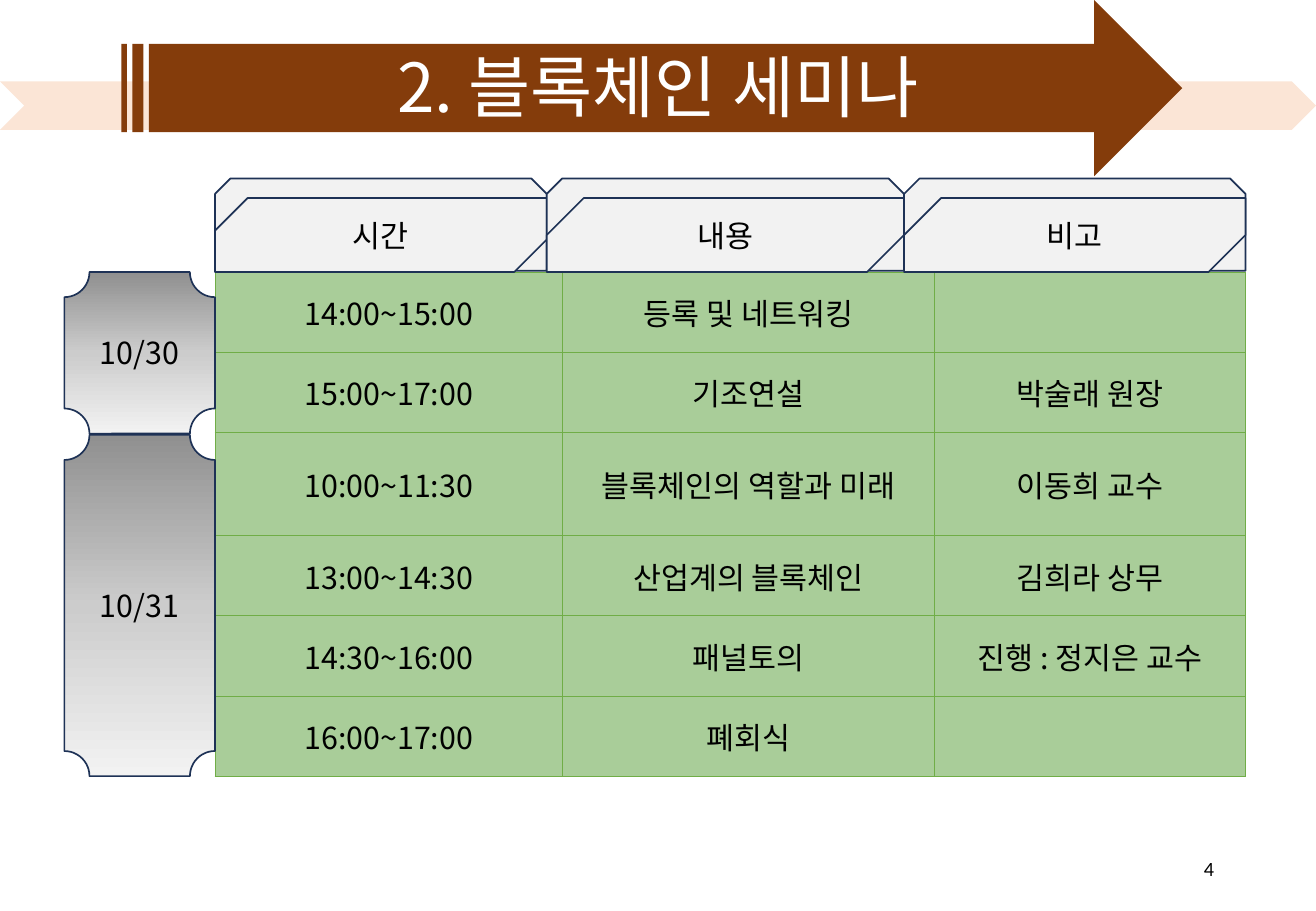
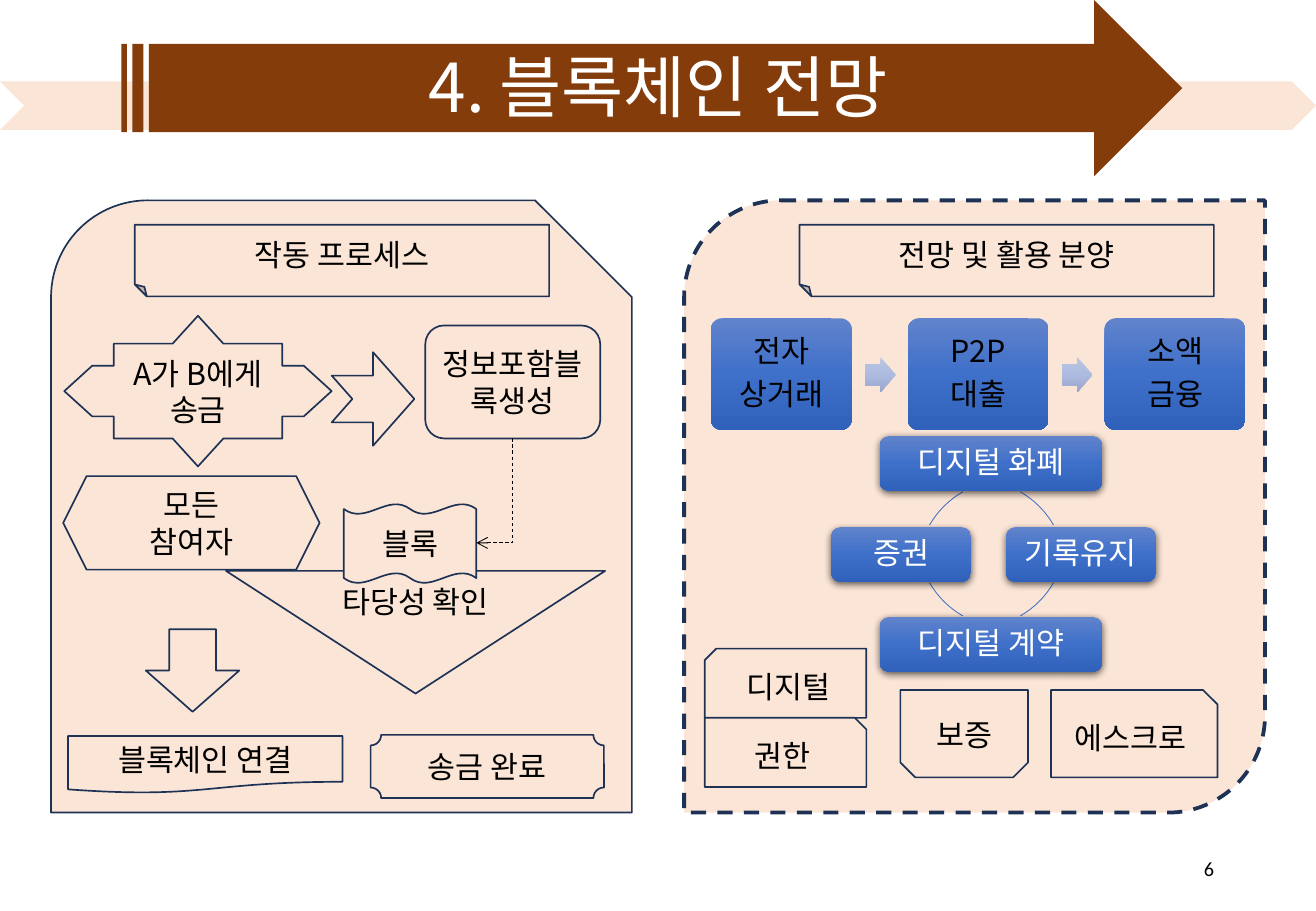
from lxml import etree
from pptx import Presentation
from pptx import util as u
from pptx.dml.color import RGBColor
from pptx.enum import dml, shapes, text
from pptx.oxml.ns import qn

PX = 9144  # 100 px to the inch
W, H = 1083, 750
FONT = "Noto Sans CJK KR"
BLACK, WHITE = "000000", "FFFFFF"
BROWN, PEACH, NAVY, PALE = "843C0B", "FBE5D6", "1E3256", "F2F2F2"
GREEN, GREEN_EDGE, BLUE = "A9CD99", "70AD47", "4472C4"
GREY_GRAD = ("909090", "CCCCCC", "F2F2F2")
BLUE_GRAD = ("6183CB", "3E70CA", "3062BB")
HAZE_GRAD = ("BBC5E3", "AEBBE0", "98A4CB")
S = shapes.MSO_SHAPE
CENTER, RIGHT = text.PP_ALIGN.CENTER, text.PP_ALIGN.RIGHT
DASH = dml.MSO_LINE.DASH


def emu(*lengths):
    return [u.Emu(n * PX) for n in lengths]


def rgb(value):
    return RGBColor.from_string(value)


def sub(parent, tag, **attrs):
    return etree.SubElement(parent, qn(tag), {k: str(v) for k, v in attrs.items()})


def write(tf, words, size=18, color=BLACK, font=FONT, align=CENTER, spacing=None, after=None):
    tf.vertical_anchor = text.MSO_ANCHOR.MIDDLE
    for i, line in enumerate(words.split("\n")):
        p = tf.add_paragraph() if i else tf.paragraphs[0]
        p.alignment = align
        if spacing:
            p.line_spacing = spacing
        if after:
            p.space_after = u.Pt(after)
        r = p.add_run()
        r.text = line
        r.font.size, r.font.name = u.Pt(size), font
        r.font.color.rgb = rgb(color)
        sub(r._r.get_or_add_rPr(), "a:ea", typeface=font)


def label(parent, box, words, **style):
    tf = parent.add_textbox(*emu(*box)).text_frame
    tf.word_wrap = True
    write(tf, words, **style)


def gradient(sp, colors):
    """Vertical gradient with evenly spaced stops."""
    sp.fill.gradient()
    sp.fill.gradient_angle = 270
    stops = sp.element.spPr.find(".//" + qn("a:gsLst"))
    stops.clear()
    for i, color in enumerate(colors):
        gs = sub(stops, "a:gs", pos=100000 * i // (len(colors) - 1))
        sub(gs, "a:srgbClr", val=color)


def shape(parent, kind, box, words="", fill=PEACH, line=NAVY, width=1, adj=(), flip=False):
    sp = parent.add_shape(kind, *emu(*box))
    sp.shadow.inherit = False
    for i, value in enumerate(adj):
        sp.adjustments[i] = value
    if fill is None:
        sp.fill.background()
    elif isinstance(fill, tuple):
        gradient(sp, fill)
    else:
        sp.fill.solid()
        sp.fill.fore_color.rgb = rgb(fill)
    if line:
        sp.line.color.rgb, sp.line.width = rgb(line), u.Pt(width)
    else:
        sp.line.fill.background()
    if flip:
        sp.element.spPr.xfrm.set("flipH", "1")
    if words:
        write(sp.text_frame, words)
    return sp


def node(parent, box, words, color=WHITE, adj=(), shadow=True):
    """Blue gradient box with a tight text margin."""
    sp = shape(parent, S.ROUNDED_RECTANGLE, box, fill=BLUE_GRAD, line=None, adj=adj)
    tf = sp.text_frame
    tf.margin_left = tf.margin_right = tf.margin_top = tf.margin_bottom = emu(7)[0]
    write(tf, words, color=color, spacing=0.9, after=6.3)
    if shadow:
        effects = sp.element.spPr.find(qn("a:effectLst"))
        outer = sub(effects, "a:outerShdw", blurRad=57150, dist=19050, dir=5400000,
                    algn="ctr", rotWithShape=0)
        sub(sub(outer, "a:srgbClr", val=BLACK), "a:alpha", val=63000)


def elbow_down_left(parent, start, end, box):
    """Dashed arrow from the bottom of one shape to the right side of a flipped one."""
    x, y, w, h = box
    c = parent.add_connector(shapes.MSO_CONNECTOR.ELBOW, *emu(x, y, x + w, y + h))
    c.begin_connect(start, 2)
    c.end_connect(end, 1)
    c.left, c.top, c.width, c.height = emu(*box)
    c.line.color.rgb, c.line.width = rgb(BLACK), u.Pt(0.5)
    c.line.dash_style = DASH
    spPr = c.element.spPr
    spPr.xfrm.set("flipH", "0")
    spPr.xfrm.set("rot", "5400000")
    spPr.find(qn("a:prstGeom")).set("prst", "bentConnector2")
    sub(spPr.find(qn("a:ln")), "a:tailEnd", type="arrow")
    sub(spPr, "a:effectLst")


def table(parent, x, y, cols, heights, rows):
    frame = parent.add_table(len(rows), len(cols), *emu(x, y, sum(cols), sum(heights)))
    t = frame.table
    t.first_row = t.horz_banding = False
    for column, width in zip(t.columns, emu(*cols)):
        column.width = width
    for row, height, words in zip(t.rows, emu(*heights), rows):
        row.height = height
        for cell, word in zip(row.cells, words):
            tcPr = cell._tc.get_or_add_tcPr()
            for side in "LRTB":
                ln = sub(tcPr, "a:ln" + side, w=6350)
                sub(sub(ln, "a:solidFill"), "a:srgbClr", val=GREEN_EDGE)
            cell.fill.solid()
            cell.fill.fore_color.rgb = rgb(GREEN)
            cell.vertical_anchor = text.MSO_ANCHOR.MIDDLE
            if word:
                write(cell.text_frame, word)


def new_slide(prs, title, number):
    """Blank slide with the shared band, arrow, title and page number."""
    s = prs.slides.add_slide(prs.slide_layouts[6])
    shape(s.shapes, S.CHEVRON, (0, 67, W, 40), line=None)
    shape(s.shapes, S.STRIPED_RIGHT_ARROW, (100, 0, 873, 145), fill=BROWN, line=None)
    label(s.shapes, (0, 2, W, 145), title, size=40, color=WHITE, spacing=0.9)
    label(s.shapes, (765, 695, 244, 40), number, size=12, font="Calibri", align=RIGHT)
    return s


def seminar(prs):
    sh = new_slide(prs, "2. 블록체인 세미나", "4").shapes
    table(sh, 177, 224, (286, 306, 256), (66, 66, 85, 66, 66, 66), [
        ("14:00~15:00", "등록 및 네트워킹", ""),
        ("15:00~17:00", "기조연설", "박술래 원장"),
        ("10:00~11:30", "블록체인의 역할과 미래", "이동희 교수"),
        ("13:00~14:30", "산업계의 블록체인", "김희라 상무"),
        ("14:30~16:00", "패널토의", "진행 : 정지은 교수"),
        ("16:00~17:00", "폐회식", ""),
    ])
    # Column tabs
    x = 177
    for word, width, cut in (("시간", 273, 0.44), ("내용", 294, 0.5), ("비고", 281, 0.5)):
        shape(sh, S.SNIP_2_SAME_RECTANGLE, (x, 147, width, 76), fill=PALE)
        shape(sh, S.SNIP_2_DIAG_RECTANGLE, (x, 163, width, 61), word, fill=PALE, adj=(cut, 0))
        x += width
    # Dates
    for word, y, height in (("10/30", 224, 133), ("10/31", 358, 281)):
        shape(sh, S.PLAQUE, (53, y, 124, height), word, fill=GREY_GRAD)


def process_panel(s):
    g = s.shapes.add_group_shape().shapes
    shape(g, S.SNIP_ROUND_RECTANGLE, (42, 165, 478, 504))
    shape(g, S.FOLDED_CORNER, (111, 185, 341, 59), "작동 프로세스", flip=True)
    shape(g, S.QUAD_ARROW_CALLOUT, (53, 260, 220, 124), "A가 B에게 송금",
          adj=(0.336, 0.168, 0.185, 0.63), flip=True)
    info = shape(g, S.ROUNDED_RECTANGLE, (350, 268, 144, 93), "정보포함블록생성")
    shape(g, S.NOTCHED_RIGHT_ARROW, (273, 290, 68, 77))
    shape(g, S.HEXAGON, (52, 392, 211, 77), "모든\n참여자")
    shape(g, S.FLOWCHART_MERGE, (186, 470, 312, 101), "타당성 확인")
    shape(g, S.DOWN_ARROW, (120, 518, 77, 68))
    shape(g, S.FLOWCHART_DOCUMENT, (56, 606, 226, 47), "블록체인 연결")
    shape(g, S.PLAQUE, (305, 605, 192, 52), "송금 완료")
    block = shape(g, S.DOUBLE_WAVE, (283, 415, 109, 65), "블록", flip=True)
    elbow_down_left(g, info, block, (364, 389, 86, 30))


def outlook_panel(s):
    g = s.shapes.add_group_shape().shapes
    panel = shape(g, S.ROUND_2_DIAG_RECTANGLE, (563, 165, 478, 504), width=2.25)
    panel.line.dash_style = DASH
    shape(g, S.FOLDED_CORNER, (658, 185, 341, 59), "전망 및 활용 분양", flip=True)
    # Snipped cards
    shape(g, S.SNIP_1_RECTANGLE, (580, 534, 133, 57), "디지털", flip=True)
    shape(g, S.SNIP_1_RECTANGLE, (580, 591, 133, 57), "권한")
    shape(g, S.SNIP_2_SAME_RECTANGLE, (741, 568, 105, 72), adj=(0, 0.17))
    label(g, (758, 585, 71, 40), "보증")
    shape(g, S.SNIP_1_RECTANGLE, (865, 568, 137, 72), "에스크로")
    # Row of steps
    for i, words in enumerate(("전자\n상거래", "P2P\n대출", "소액\n금융")):
        x = 585 + 162 * i
        if i:
            shape(g, S.RIGHT_ARROW, (x - 35, 294, 25, 29), fill=HAZE_GRAD, line=None,
                  adj=(0.6, 0.5))
        node(g, (x, 262, 116, 92), words, color=BLACK, adj=(0.1,), shadow=False)
    # Cycle: 30 degree arcs, with angles in units of 1/0.6 degree
    for x, y, start in ((728, 395, 300), (728, 368, 30), (755, 368, 120), (755, 395, 210)):
        shape(g, S.ARC, (x, y, 149, 149), fill=None, line=BLUE, width=0.5,
              adj=(start * 0.6, (start + 30) * 0.6))
    for x, y, width, word in ((724, 359, 183, "디지털 화폐"), (828, 434, 123, "기록유지"),
                              (724, 508, 183, "디지털 계약"), (684, 434, 115, "증권")):
        node(g, (x, y, width, 45), word)


def main():
    prs = Presentation()
    prs.slide_width, prs.slide_height = emu(W, H)
    seminar(prs)
    s = new_slide(prs, "4. 블록체인 전망", "6")
    process_panel(s)
    outlook_panel(s)
    prs.save("out.pptx")


if __name__ == "__main__":
    main()
